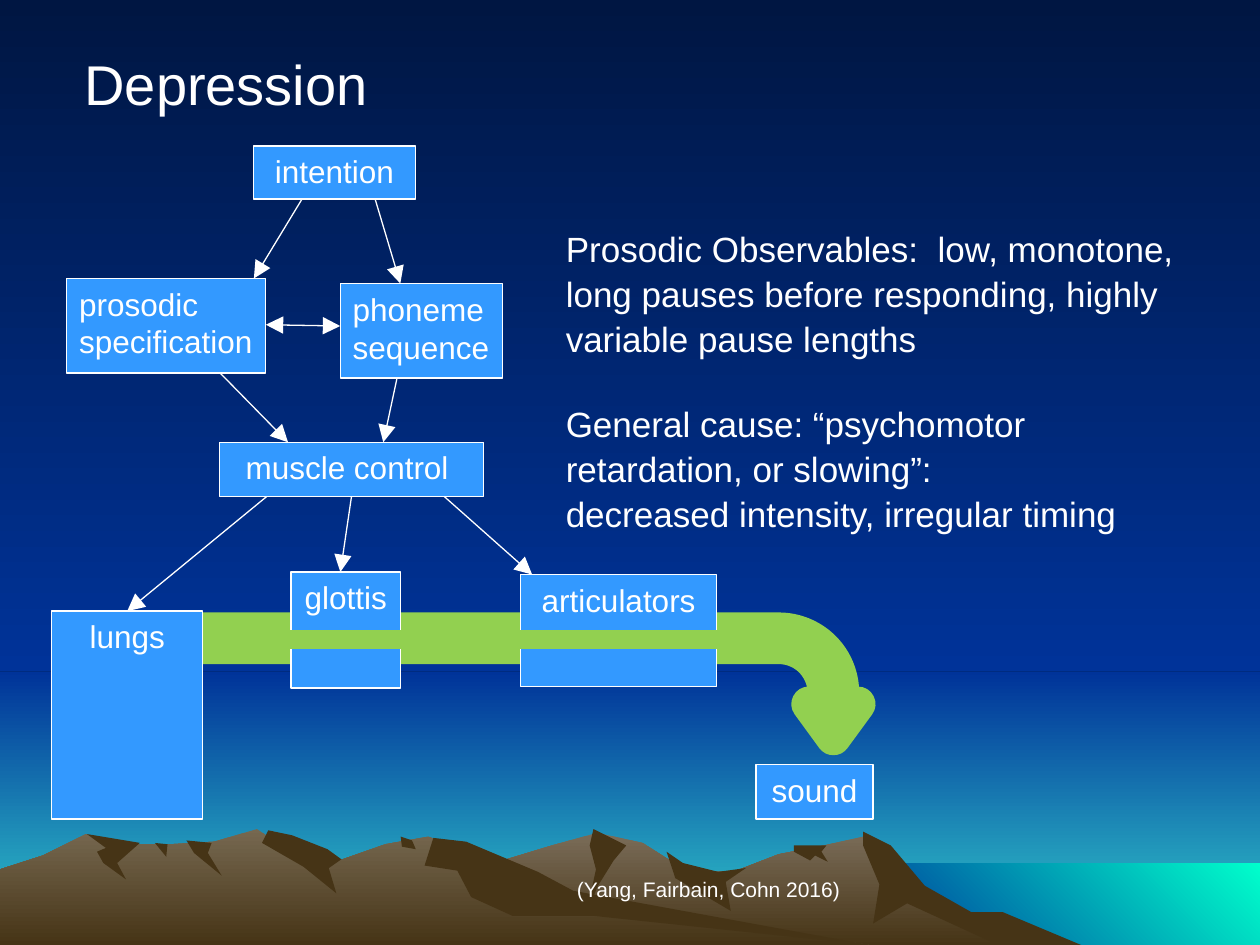
from typing import NamedTuple

from lxml.etree import SubElement
from pptx import Presentation
from pptx.dml.color import RGBColor
from pptx.enum.shapes import MSO_CONNECTOR, MSO_SHAPE
from pptx.enum.text import MSO_ANCHOR, MSO_AUTO_SIZE, PP_ALIGN
from pptx.oxml.ns import qn
from pptx.util import Inches, Pt

COLUMNS, ROWS = 1000, 750
CELL = Inches(10) // COLUMNS
WHITE, BLUE, GREEN, EARTH = "FFFFFF", "3399FF", "92D050", "463416"
NIGHT, DUSK, HORIZON, SEA = "001642", "003399", "33CCCC", "00FFCC"
DOWN, UP_RIGHT = 270, 45


class Box(NamedTuple):
    left: float
    top: float
    width: float
    height: float

    def point(self, across, down):
        return self.left + self.width * across, self.top + self.height * down

    def inside(self, region):
        return Box(region.left + self.left, region.top + self.top, self.width, self.height)

    def lengths(self):
        return [int(CELL * length) for length in self]


class Ridge(NamedTuple):
    start: int
    step: int
    end: int
    top_color: str
    heights: tuple
    shadows: dict


RIGHT_RIDGE = Ridge(
    258, 36, 820, "7A6C58", (0, 21, 42, 56, 68, 79, 89, 81, 58, 58, 72, 79, 87, 50, 27, 12),
    {
        (685, 90): [(22, 11), (49, 43), (86, 64), (111, 64), (173, 99), (107, 90), (35, 57),
                    (8, 73), (13, 42), (0, 11)],
        (471, 92): [(26, 13), (16, 25), (3, 46), (-6, 69), (2, 32), (-3, 13)],
        (529, 74): [(13, 9), (41, 16), (63, 13), (47, 24), (51, 47), (7, 21)],
        (630, 79): [(26, 0), (22, 5), (27, 13), (17, 8), (13, 12), (0, 5)],
    },
)
LEFT_RIDGE = Ridge(
    0, 34, 690, "766850", (60, 71, 88, 80, 80, 82, 92, 69, 68, 80, 86, 73, 52, 36),
    {
        (213, 91): [(19, 4), (47, 15), (58, 23), (48, 30), (54, 50), (28, 29), (-5, 10)],
        (344, 85): [(26, 3), (83, 27), (111, 42), (346, 85), (128, 62), (63, 62), (30, 47),
                    (19, 26), (-7, 22)],
        (318, 86): [(9, 3), (12, 10), (1, 8)],
        (148, 83): [(20, 2), (17, 10), (28, 28), (6, 10)],
        (123, 81): [(10, 1), (9, 11)],
        (69, 88): [(42, 7), (24, 23), (31, 36), (13, 23), (8, 14), (15, 11)],
    },
)
STAGES = {
    "intention": Box(201, 16, 129, 42),
    "phoneme sequence": Box(270, 125, 129, 75),
    "prosodic specification": Box(53, 121, 158, 75),
    "sound ": Box(600, 507, 93, 43),
    "muscle control ": Box(174, 251, 210, 43),
}
ORGANS = {
    "lungs": Box(41, 385, 120, 165),
    "glottis": Box(231, 354, 87, 92),
    "articulators": Box(413, 356, 156, 89),
}
LEFT_ALIGNED = {"phoneme sequence", "prosodic specification"}
STEPS = [
    ("intention", 0.3, "prosodic specification", 0.94),
    ("intention", 0.75, "phoneme sequence", 0.37),
    ("prosodic specification", 0.77, "muscle control ", 0.26),
    ("phoneme sequence", 0.35, "muscle control ", 0.62),
    ("muscle control ", 0.18, "lungs", 0.5),
    ("muscle control ", 0.5, "glottis", 0.45),
    ("muscle control ", 0.85, "articulators", 0.06),
]
AIRWAY_TOP, AIRWAY_HEIGHT, AIRWAY_OVERLAP = 400, 15, 18
OBSERVABLES = [
    ("Prosodic Observables:  low, monotone, long pauses before responding, "
     "highly variable pause lengths", 0),
    ("General cause: “psychomotor retardation, or slowing”:", 23),
    ("decreased intensity, irregular timing", 0),
]


def color(value):
    return RGBColor.from_string(value)


def apply(target, values):
    for name, value in values.items():
        setattr(target, name, value)


def paint(fill, first, last=None, angle=DOWN):
    if last is None:
        fill.solid()
        fill.fore_color.rgb = color(first)
        return
    fill.gradient()
    fill.gradient_angle = angle
    for stop, value in zip(fill.gradient_stops, (first, last)):
        stop.color.rgb = color(value)


def outline(line, value, width):
    line.color.rgb = color(value)
    line.width = Pt(width)


def finish(shape, *paints):
    shape.shadow.inherit = False
    shape.line.fill.background()
    if paints:
        paint(shape.fill, *paints)
    else:
        shape.fill.background()
    return shape


def add_block(slide, box, *paints, kind=MSO_SHAPE.RECTANGLE):
    return finish(slide.shapes.add_shape(kind, *box.lengths()), *paints)


def add_polygon(slide, points, *paints):
    builder = slide.shapes.build_freeform(*points[0], scale=CELL)
    builder.add_line_segments(points[1:], close=True)
    finish(builder.convert_to_shape(), *paints)


def add_ridge(slide, region, ridge):
    bottom = region.top + region.height
    start = region.left + ridge.start
    skyline = [(start + index * ridge.step, bottom - height)
               for index, height in enumerate(ridge.heights)]
    base = [(region.left + ridge.end, bottom), (start, bottom)]
    add_polygon(slide, skyline + base, ridge.top_color, EARTH)
    for (across, height), offsets in ridge.shadows.items():
        crest = (region.left + across, bottom - height)
        slope = [(crest[0] + right, min(crest[1] + drop, bottom)) for right, drop in offsets]
        add_polygon(slide, [crest] + slope, EARTH)


def add_scenery(slide, region):
    paint(slide.background.fill, NIGHT, DUSK)
    add_block(slide, Box(0, 0, COLUMNS, 533).inside(region), NIGHT, DUSK)
    add_block(slide, Box(0, 533, COLUMNS, 217).inside(region), DUSK, HORIZON)
    add_block(slide, Box(683, 685, 317, 65).inside(region), DUSK, SEA, UP_RIGHT)
    for ridge in (RIGHT_RIDGE, LEFT_RIDGE):
        add_ridge(slide, region, ridge)


def write(paragraph, text, size, **values):
    paragraph.text = text
    apply(paragraph, values)
    apply(paragraph.font, {"size": Pt(size), "name": "Arial"})
    paragraph.font.color.rgb = color(WHITE)


def add_labels(slide, boxes):
    for text, box in boxes.items():
        shape = add_block(slide, box, BLUE)
        outline(shape.line, WHITE, 0.75)
        frame = shape.text_frame
        apply(frame, {"word_wrap": True, "vertical_anchor": MSO_ANCHOR.TOP})
        alignment = PP_ALIGN.CENTER
        if text in LEFT_ALIGNED:
            alignment = PP_ALIGN.LEFT
            frame.margin_right = 0
        write(frame.paragraphs[0], text, 18, alignment=alignment)


def add_arrow(slide, start, end, heads=("tailEnd",)):
    ends = [int(CELL * length) for length in start + end]
    connector = slide.shapes.add_connector(MSO_CONNECTOR.STRAIGHT, *ends)
    outline(connector.line, WHITE, 0.75)
    properties = connector.element.spPr
    for head in heads:
        SubElement(properties.find(qn("a:ln")), qn(f"a:{head}"),
                   type="triangle", w="lg", len="lg")
    SubElement(properties, qn("a:effectLst"))


def add_airflow(slide, box):
    flow = add_block(slide, box, kind=MSO_SHAPE.U_TURN_ARROW)
    for index, value in enumerate((0.116, 0.171, 0.234, 0.438, 0.75)):
        flow.adjustments[index] = value
    outline(flow.line, GREEN, 20)
    SubElement(flow.element.spPr.find(qn("a:ln")), qn("a:round"))


def add_speech_chain(slide, region):
    stages, organs = ({name: box.inside(region) for name, box in group.items()}
                      for group in (STAGES, ORGANS))
    boxes = {**stages, **organs}
    add_labels(slide, stages)
    for source, exit_share, target, entry_share in STEPS:
        add_arrow(slide, boxes[source].point(exit_share, 1), boxes[target].point(entry_share, 0))
    add_airflow(slide, Box(105, 400, 576, 114).inside(region))
    add_labels(slide, organs)
    for name in ("glottis", "articulators"):
        organ = organs[name]
        add_block(slide, Box(organ.left - AIRWAY_OVERLAP, region.top + AIRWAY_TOP,
                             organ.width + 2 * AIRWAY_OVERLAP, AIRWAY_HEIGHT), GREEN)
    add_arrow(slide, boxes["phoneme sequence"].point(0, 0.45),
              boxes["prosodic specification"].point(1, 0.49), ("headEnd", "tailEnd"))


def place_text(shape, box, entries, size, spacing=1.0):
    shape.element.getparent().append(shape.element)
    apply(shape, dict(zip(("left", "top", "width", "height"), box.lengths())))
    frame = shape.text_frame
    apply(frame, {"word_wrap": True, "auto_size": MSO_AUTO_SIZE.NONE,
                  "vertical_anchor": MSO_ANCHOR.TOP})
    for index, (text, gap) in enumerate(entries):
        paragraph = frame.add_paragraph() if index else frame.paragraphs[0]
        write(paragraph, text, size, alignment=PP_ALIGN.LEFT, line_spacing=spacing,
              space_before=Pt(gap), space_after=Pt(0))
        properties = paragraph._p.get_or_add_pPr()
        for name in ("marL", "indent"):
            properties.set(name, "0")
        SubElement(properties, qn("a:buNone"))


def main():
    presentation = Presentation()
    apply(presentation, {"slide_width": CELL * COLUMNS, "slide_height": CELL * ROWS})
    slide = presentation.slides.add_slide(presentation.slide_layouts[1])
    add_scenery(slide, Box(0, 0, COLUMNS, ROWS))
    add_speech_chain(slide, Box(0, 100, 700, 550))
    place_text(slide.placeholders[1], Box(439, 173, 529, 259), OBSERVABLES, 20, 1.07)
    caption_box = Box(448, 691, 502, 30)
    caption = slide.shapes.add_textbox(*caption_box.lengths())
    place_text(caption, caption_box, [("(Yang, Fairbain, Cohn 2016)", 0)], 12)
    place_text(slide.shapes.title, Box(57, 34, 327, 64), [("Depression", 0)], 32)
    presentation.save("out.pptx")


if __name__ == "__main__":
    main()
